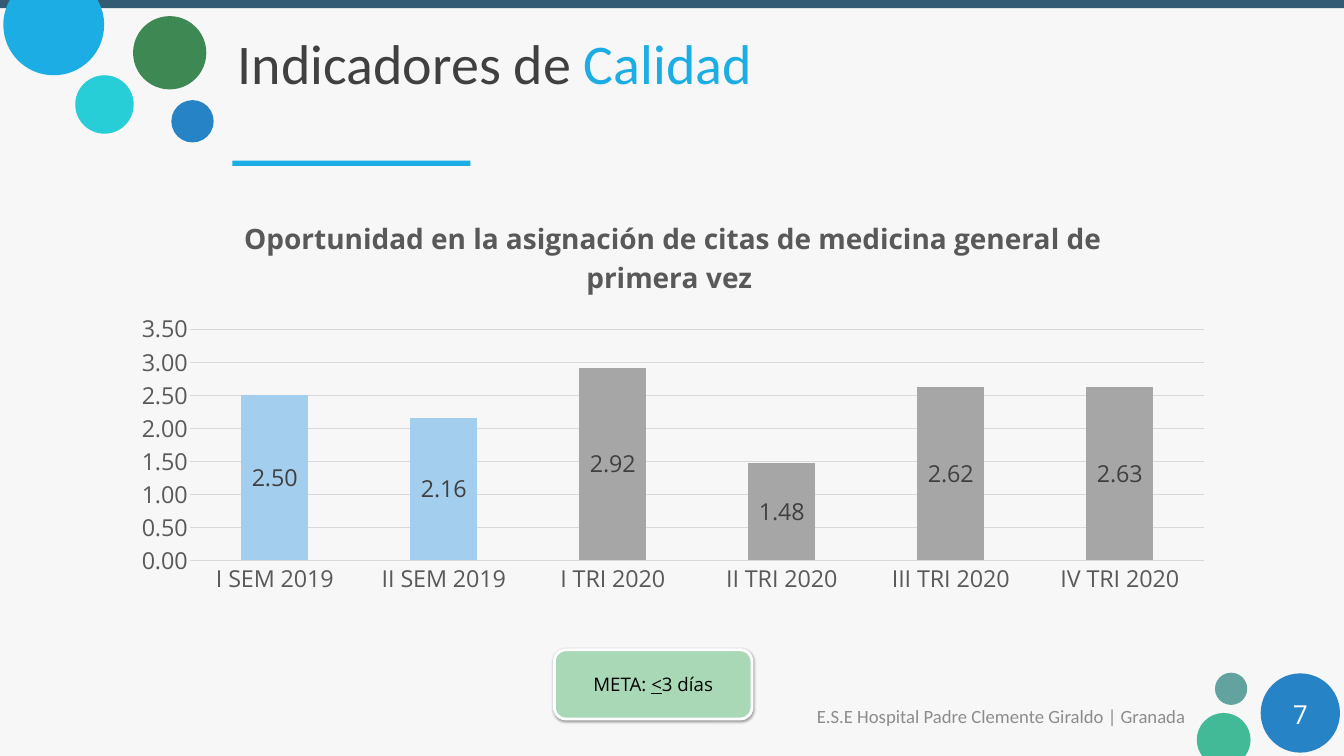
from dataclasses import dataclass
from math import asin, cos, pi, sin, tan

from lxml import etree
from pptx import Presentation, util as u
from pptx.chart.data import CategoryChartData
from pptx.dml.color import RGBColor
from pptx.enum import chart as ch, shapes, text
from pptx.oxml import parse_xml
from pptx.oxml.ns import nsdecls, qn

COLS, ROWS = 20, 11.25


@dataclass(frozen=True)
class Theme:
    """Colours, fonts and type sizes of the slide."""
    back: str = "F7F7F7"
    bar: str = "335B74"
    sky: str = "1CADE4"
    blue: str = "2683C6"
    aqua: str = "27CED7"
    green: str = "3E8853"
    teal: str = "62A39F"
    mint: str = "42BA97"
    goal: str = "A9D8B7"
    past: str = "A3CEED"
    now: str = "A6A6A6"
    grid: str = "D9D9D9"
    dark: str = "404040"
    gray: str = "595959"
    pale: str = "8C8C8C"
    white: str = "FFFFFF"
    black: str = "000000"
    head: str = "Calibri"
    body: str = "Open Sans"
    title: int = 60
    chart: int = 30
    page: int = 28
    label: int = 25
    small: int = 20


T = Theme()
CIRCLES = [
    (2.55, 1.49, 0.63, T.blue),
    (1.12, 1.12, 0.87, T.aqua),
    (1.98, 0.24, 1.09, T.green),
    (18.08, 10.01, 0.48, T.teal),
    (18.76, 10.02, 1.18, T.blue),
]
CHART = (1.78, 2.97, 16.47, 6)
PLOT = (1.05, 1.93, 15.09, 3.44)
CAPTION = "Oportunidad en la asignación de citas de medicina general de primera vez "
VALUES = {
    "I SEM 2019": 2.5, "II SEM 2019": 2.16, "I TRI 2020": 2.92,
    "II TRI 2020": 1.48, "III TRI 2020": 2.62, "IV TRI 2020": 2.63,
}


def cells(*sizes):
    """Turn grid cells into slide lengths."""
    return [u.Inches(size) for size in sizes]


def tint(color):
    """Turn a hex code into a colour."""
    return RGBColor.from_string(color)


def paint(shape, color):
    """Give a shape a flat fill with no line or shadow."""
    shape.shadow.inherit = False
    shape.fill.solid()
    shape.fill.fore_color.rgb = tint(color)
    shape.line.fill.background()
    return shape


def block(slide, kind, box, color):
    """Add a flat preset shape."""
    return paint(slide.shapes.add_shape(kind, *cells(*box)), color)


def disc(slide, x, y, r, edge, color):
    """Add a circle cut off by the slide's top or bottom edge."""
    side = 0 if edge < y else pi
    dip = asin(abs(edge - y) / r)
    turns = [side - dip, side, side + pi / 2, side + pi, side + pi + dip]
    dots = [cells(x + r * cos(turn), y + r * sin(turn)) for turn in turns]
    pen = slide.shapes.build_freeform(*dots[0])
    pen.add_line_segments(dots[1:], close=True)
    shape = paint(pen.convert_to_shape(), color)
    lines = list(shape._element.iter(qn("a:lnTo")))
    for line, start, end in zip(lines, turns, turns[1:]):
        bend = 4 / 3 * tan((end - start) / 4)
        line.tag = qn("a:cubicBezTo")
        for spot, (turn, lean) in enumerate(((start, bend), (end, -bend))):
            left, top = cells(x + r * (cos(turn) - lean * sin(turn)),
                              y + r * (sin(turn) + lean * cos(turn)))
            knob = etree.Element(qn("a:pt"), x=str(left - shape.left), y=str(top - shape.top))
            line.insert(spot, knob)


def style(font, size, color, face=T.body, bold=False):
    """Set the main traits of a font."""
    font.size, font.name, font.bold = u.Pt(size), face, bold
    font.color.rgb = tint(color)


def write(shape, *runs, size, color, face=T.body, align="LEFT", pad=(0.18, 0.09)):
    """Fill a shape with runs of text, each with a colour or underline of its own."""
    frame = shape.text_frame
    frame.word_wrap = True
    frame.vertical_anchor = text.MSO_ANCHOR.MIDDLE
    frame.margin_left = frame.margin_right = u.Inches(pad[0])
    frame.margin_top = frame.margin_bottom = u.Inches(pad[1])
    line = frame.paragraphs[0]
    line.alignment = text.PP_ALIGN[align]
    for words, own in runs:
        run = line.add_run()
        run.text = words
        style(run.font, size, own.get("color", color), face)
        run.font.underline = own.get("under", False)


def label(slide, box, *runs, **form):
    """Add a text box."""
    write(slide.shapes.add_textbox(*cells(*box)), *runs, **form)


def goal(slide):
    """Add the raised box that states the goal."""
    shape = block(slide, shapes.MSO_SHAPE.ROUNDED_RECTANGLE, (8.25, 9.67, 2.94, 1.03), T.goal)
    shape.line.color.rgb = tint(T.white)
    shape.line.width = u.Pt(3)
    glow = shape._element.spPr.find(qn("a:effectLst"))
    glow.append(parse_xml(
        f'<a:outerShdw {nsdecls("a")} blurRad="40000" dist="20000" dir="5400000" rotWithShape="0">'
        f'<a:srgbClr val="{T.black}"><a:alpha val="38000"/></a:srgbClr></a:outerShdw>'))
    write(shape, ("META: ", {}), ("<", {"under": True}), ("3 días", {}),
          size=T.small, color=T.black, align="CENTER", pad=(0.1, 0.05))


def place(plot):
    """Set the inner plot area as shares of the chart."""
    area = plot._element.getparent()
    for old in area.findall(qn("c:layout")):
        area.remove(old)
    layout = etree.Element(qn("c:layout"))
    manual = etree.SubElement(layout, qn("c:manualLayout"))
    shares = [size / full for size, full in zip(PLOT, CHART[2:] * 2)]
    marks = {"layoutTarget": "inner", "xMode": "edge", "yMode": "edge", **dict(zip("xywh", shares))}
    for name, val in marks.items():
        etree.SubElement(manual, qn(f"c:{name}")).set("val", str(val))
    area.insert(0, layout)


def axes(chart):
    """Format both axes and the grid lines."""
    base, scale = chart.category_axis, chart.value_axis
    for axis in (base, scale):
        axis.major_tick_mark = axis.minor_tick_mark = ch.XL_TICK_MARK.NONE
        style(axis.tick_labels.font, T.label, T.gray)
    scale.minimum_scale, scale.maximum_scale, scale.major_unit = 0, 3.5, 0.5
    scale.tick_labels.number_format = "0.00"
    scale.tick_labels.number_format_is_linked = False
    scale.format.line.fill.background()
    for line, width in ((base.format.line, 1), (scale.major_gridlines.format.line, 0.75)):
        line.color.rgb = tint(T.grid)
        line.width = u.Pt(width)


def bars(slide):
    """Add the column chart of waiting days."""
    data = CategoryChartData(number_format="0.00")
    data.categories = list(VALUES)
    data.add_series(CAPTION, list(VALUES.values()))
    chart = slide.shapes.add_chart(ch.XL_CHART_TYPE.COLUMN_STACKED, *cells(*CHART), data).chart
    style(chart.font, T.label, T.black)
    chart.has_legend = False
    run = chart.chart_title.text_frame.paragraphs[0].add_run()
    run.text = CAPTION
    style(run.font, T.chart, T.gray, bold=True)
    chart.chart_title.include_in_layout = False
    axes(chart)
    plot = chart.plots[0]
    plot.gap_width, plot.overlap, plot.vary_by_categories = 150, 100, False
    row = plot.series[0]
    for spot, name in enumerate(VALUES):
        fill = row.points[spot].format.fill
        fill.solid()
        fill.fore_color.rgb = tint(T.past if "SEM" in name else T.now)
    tags = row.data_labels
    tags.show_value = True
    tags.number_format, tags.number_format_is_linked = "0.00", False
    tags.position = ch.XL_LABEL_POSITION.CENTER
    style(tags.font, T.label, T.dark)
    place(plot)


def main():
    """Build and save the slide."""
    deck = Presentation()
    deck.slide_width, deck.slide_height = cells(COLS, ROWS)
    slide = deck.slides.add_slide(deck.slide_layouts[6])
    slide.background.fill.solid()
    slide.background.fill.fore_color.rgb = tint(T.back)
    kind = shapes.MSO_SHAPE
    block(slide, kind.RECTANGLE, (0, 0, COLS, 0.12), T.bar)
    for x, y, size, color in CIRCLES:
        block(slide, kind.OVAL, (x, y, size, size), color)
    disc(slide, 0.8, 0.37, 0.75, 0, T.sky)
    disc(slide, 18.21, 11.01, 0.4, ROWS, T.mint)
    block(slide, kind.RECTANGLE, (3.46, 2.39, 3.54, 0.08), T.sky)
    label(slide, (11.49, 10.35, 6.33, 0.6), ("E.S.E Hospital Padre Clemente Giraldo | Granada", {}),
          size=T.small, color=T.pale, face=T.head, align="RIGHT")
    label(slide, (18.76, 10.32, 1.18, 0.6), ("7", {}), size=T.page, color=T.white, align="CENTER")
    label(slide, (3.36, 0.27, 15.69, 1.32), ("Indicadores de ", {}), ("Calidad", {"color": T.sky}),
          size=T.title, color=T.dark, face=T.head)
    bars(slide)
    goal(slide)
    deck.save("out.pptx")


if __name__ == "__main__":
    main()
